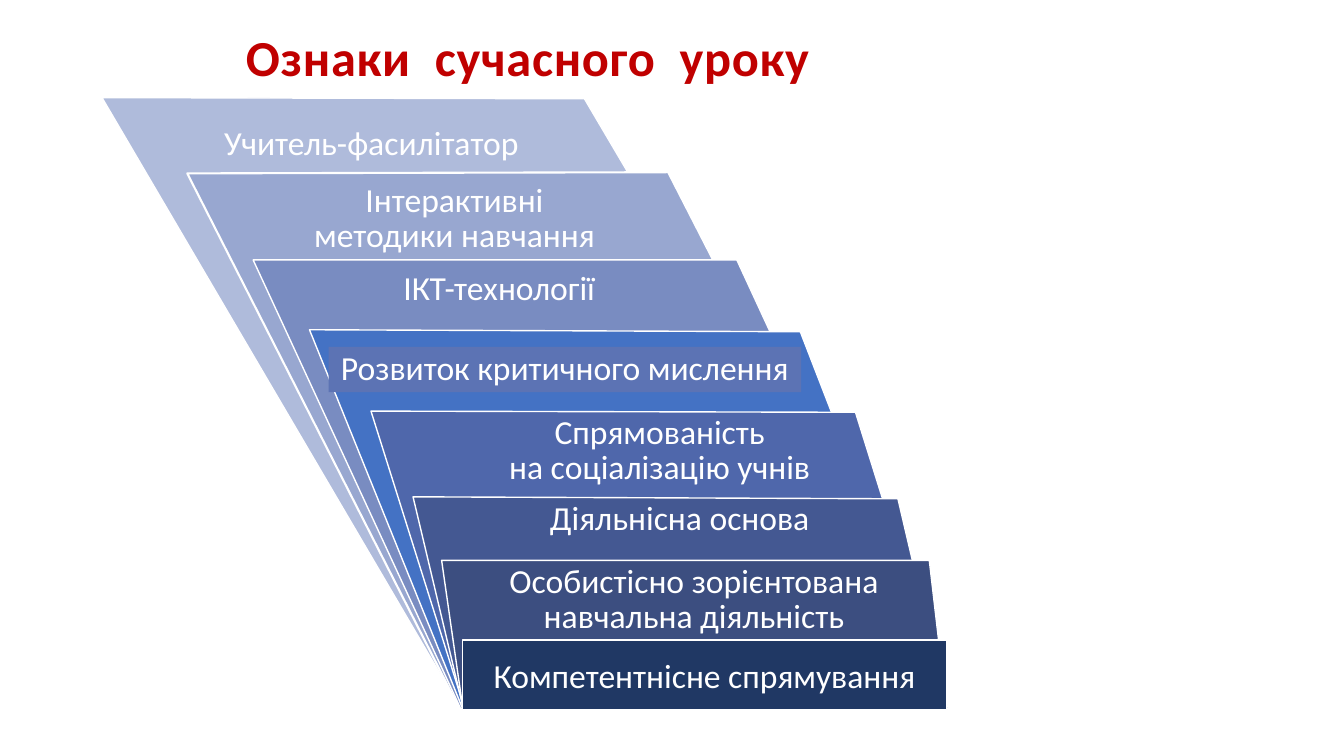
from pptx import Presentation
from pptx.dml.color import RGBColor
from pptx.enum.shapes import MSO_SHAPE
from pptx.enum.text import MSO_ANCHOR, MSO_AUTO_SIZE, PP_ALIGN
from pptx.util import Cm, Pt

TITLE = ("Ознаки  сучасного  уроку", (5.84, 0.53, 14.94, 1.8))
WIDE = 12.19
BANDS = [
    ((2.57, 2.46), (14.73, 2.49), (11.61, 17.86), "AFBBDB", 1, []),
    ((4.72, 4.37), (16.84, 4.34), (11.58, 17.86), "98A7D0", 1.5, []),
    ((6.38, 6.55), (18.57, 6.55), (11.61, 17.86), "798CC1", 1, []),
    ((7.8, 8.31), (20.17, 8.36), (11.66, 17.86), "4472C4", 1, []),
    ((9.35, 10.36), (21.56, 10.39), (11.71, 17.86), "4F67AB", 1,
     ["Спрямованість", "на соціалізацію учнів"]),
    ((10.41, 12.52), (22.63, 12.57), (11.66, 17.78), "445892", 1,
     ["Діяльнісна основа"]),
    ((11.13, 14.12), (23.42, 14.12), (11.66, 17.81), "3C4E80", 1,
     ["Особистісно зорієнтована навчальна діяльність"]),
]
BASE = ("Компетентнісне спрямування", (11.66, 16.13, WIDE, 1.75), "203864")
LABELS = [
    (["Учитель-фасилітатор"], (5.36, 3.07, 8, 1.14), "AFBBDB"),
    (["Інтерактивні", "методики навчання"], (7.62, 4.52, 7.67, 2.03), None),
    (["ІКТ-технології"], (9.86, 6.73, 5.44, 1.14), "798CC1"),
    (["Розвиток критичного мислення"], (8.28, 8.74, 11.91, 1.14), "5C73B4"),
]


def tint(code):
    return RGBColor.from_string(code)


def assign(item, form):
    for key, value in form.items():
        setattr(item, key, value)


BODY = {"size": Pt(24), "name": "Calibri"}
HEAD = {"size": Pt(36), "name": "Calibri", "bold": True}
TIGHT = {"alignment": PP_ALIGN.CENTER, "line_spacing": Pt(25)}
LOOSE = {"alignment": PP_ALIGN.CENTER}
TOP = {"word_wrap": True, "vertical_anchor": MSO_ANCHOR.TOP}
MID = {"word_wrap": True, "vertical_anchor": MSO_ANCHOR.MIDDLE}
GROW = {"word_wrap": False, "auto_size": MSO_AUTO_SIZE.SHAPE_TO_FIT_TEXT}


def write(shape, lines, frame, layout=TIGHT, font=BODY, color="FFFFFF"):
    text = shape.text_frame
    assign(text, frame)
    for i, line in enumerate(lines):
        para = text.paragraphs[0] if i == 0 else text.add_paragraph()
        assign(para, layout)
        run = para.add_run()
        run.text = line
        assign(run.font, font)
        run.font.color.rgb = tint(color)
        if font is HEAD:
            run.font._element.set("spc", "50")


def paint(shape, fill, width=None):
    shape.shadow.inherit = False
    shape.fill.solid()
    shape.fill.fore_color.rgb = tint(fill)
    if width:
        shape.line.color.rgb = tint("FFFFFF")
        shape.line.width = Pt(width)
    else:
        shape.line.fill.background()


def place(box):
    return [Cm(n) for n in box]


deck = Presentation()
assign(deck, {"slide_width": Cm(33.87), "slide_height": Cm(19.05)})
shapes = deck.slides.add_slide(deck.slide_layouts[6]).shapes

name, box = TITLE
write(shapes.add_textbox(*place(box)), [name], GROW, LOOSE, HEAD, "C00000")

for left, right, foot, fill, width, lines in BANDS:
    pen = shapes.build_freeform(*place(left))
    edge = (foot[0] + WIDE, foot[1])
    pen.add_line_segments([place(p) for p in (right, edge, foot)], close=True)
    band = pen.convert_to_shape()
    paint(band, fill, width)
    if lines:
        write(band, lines, TOP)

name, box, fill = BASE
base = shapes.add_shape(MSO_SHAPE.RECTANGLE, *place(box))
paint(base, fill, 1)
write(base, [name], MID, LOOSE)

for lines, box, fill in LABELS:
    if fill:
        label = shapes.add_shape(MSO_SHAPE.RECTANGLE, *place(box))
        paint(label, fill)
    else:
        label = shapes.add_textbox(*place(box))
    write(label, lines, {**MID, **GROW})

deck.save("out.pptx")
